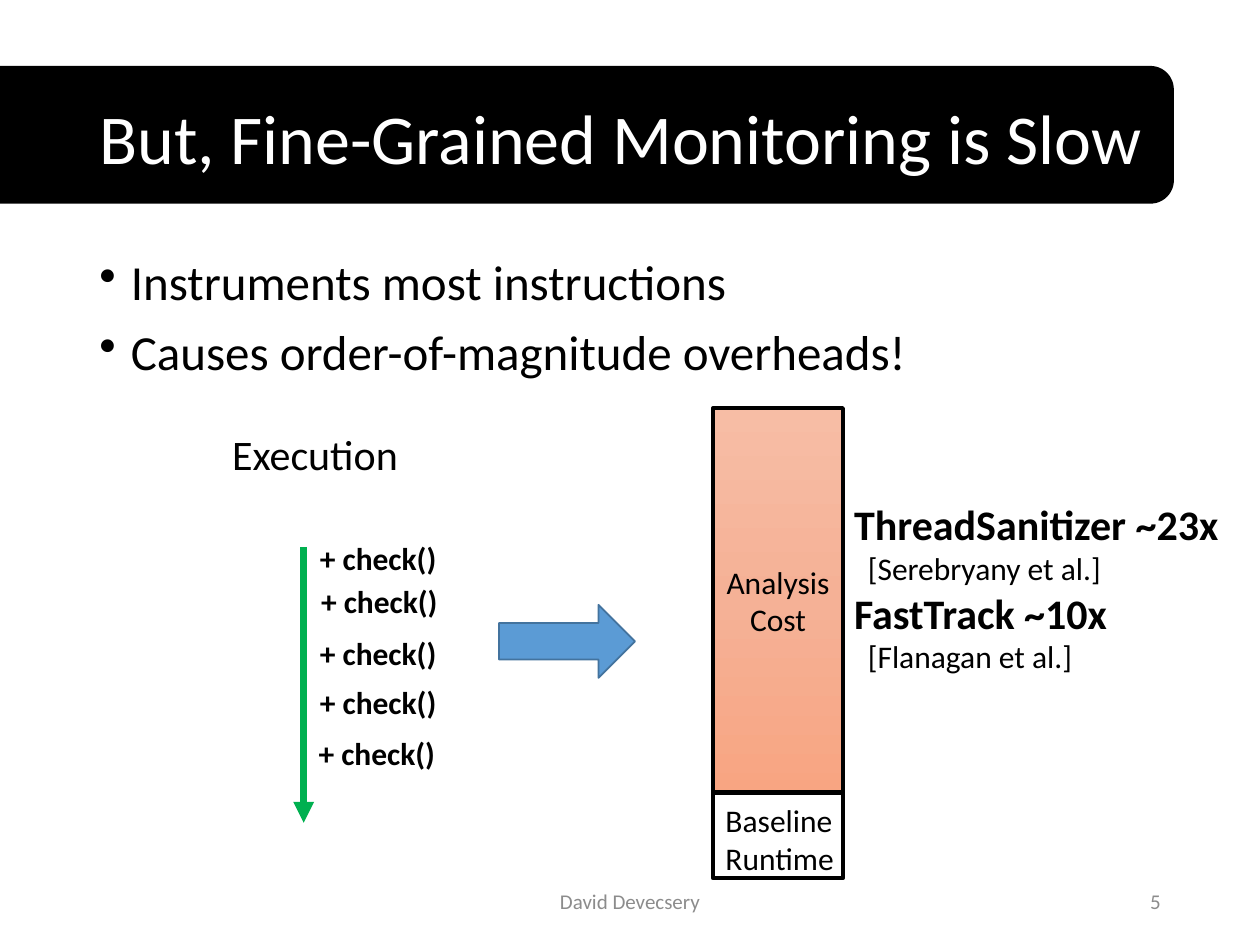
from copy import deepcopy

from pptx import Presentation
from pptx.dml.color import RGBColor
from pptx.enum.shapes import MSO_CONNECTOR as Connector, MSO_SHAPE as Preset
from pptx.enum.text import MSO_ANCHOR as Anchor, PP_ALIGN as Align
from pptx.oxml.ns import qn
from pptx.util import Pt
from lxml.etree import SubElement

BLACK = RGBColor(0x00, 0x00, 0x00)
WHITE = RGBColor(0xFF, 0xFF, 0xFF)
GRAY = RGBColor(0x8C, 0x8C, 0x8C)
GREEN = RGBColor(0x00, 0xB0, 0x50)
BLUE = RGBColor(0x5B, 0x9B, 0xD5)
DARK_BLUE = RGBColor(0x43, 0x73, 0x9E)
COST_GRADIENT = (
    RGBColor(0xF7, 0xBD, 0xA5),
    RGBColor(0xF5, 0xB1, 0x96),
    RGBColor(0xF8, 0xA5, 0x82),
)

EMU_PER_PX = 9144
FONT = "Calibri"


def px(length):
    return length * EMU_PER_PX


class SlideBuilder:
    def __init__(self, presentation):
        self.slide = presentation.slides.add_slide(presentation.slide_layouts[6])

    def label(self, shape, lines, size, color=BLACK, bold=False,
              align=Align.LEFT, anchor=Anchor.TOP, spacing=1.0):
        frame = shape.text_frame
        frame.word_wrap = True
        frame.vertical_anchor = anchor
        for index, line in enumerate(lines):
            paragraph = frame.paragraphs[0] if index == 0 else frame.add_paragraph()
            paragraph.text = line
            paragraph.alignment = align
            paragraph.line_spacing = spacing
            self.style(paragraph, size, color, bold)
        return frame.paragraphs

    def style(self, paragraph, size, color=BLACK, bold=False):
        font = paragraph.font
        font.name = FONT
        font.size = Pt(size)
        font.bold = bold
        font.color.rgb = color

    def text(self, left, top, width, height, lines, size, **style):
        box = self.slide.shapes.add_textbox(px(left), px(top), px(width), px(height))
        return self.label(box, lines, size, **style)

    def bullets(self, left, top, width, height, lines, size):
        paragraphs = self.text(left, top, width, height, lines, size, spacing=0.9)
        for index, paragraph in enumerate(paragraphs):
            properties = paragraph._p.get_or_add_pPr()
            properties.set("marL", str(px(25)))
            properties.set("indent", str(-px(25)))
            bullet = properties.makeelement(qn("a:buChar"), {"char": "•"})
            properties.find(qn("a:defRPr")).addprevious(bullet)
            if index:
                paragraph.space_before = Pt(10)

    def citations(self, left, top, width, height, entries):
        lines = [line for entry in entries for line in entry]
        paragraphs = self.text(left, top, width, height, lines, 24, bold=True)
        for paragraph in paragraphs[1::2]:
            self.style(paragraph, 18)
            paragraph._p.get_or_add_pPr().set("marL", str(px(11)))

    def shape(self, preset, left, top, width, height, fill, line, weight):
        shape = self.slide.shapes.add_shape(
            preset, px(left), px(top), px(width), px(height))
        shape.shadow.inherit = False
        if isinstance(fill, RGBColor):
            shape.fill.solid()
            shape.fill.fore_color.rgb = fill
        else:
            self.gradient(shape, fill)
        shape.line.color.rgb = line
        shape.line.width = Pt(weight)
        return shape

    def gradient(self, shape, colors):
        shape.fill.gradient()
        shape.fill.gradient_angle = 270
        first = shape._element.spPr.find(".//" + qn("a:gs"))
        first.addnext(deepcopy(first))
        stops = shape.fill.gradient_stops
        for index, (stop, color) in enumerate(zip(stops, colors)):
            stop.color.rgb = color
            stop.position = index / (len(colors) - 1)

    def arrow(self, x, top, bottom, color, weight):
        connector = self.slide.shapes.add_connector(
            Connector.STRAIGHT, px(x), px(top), px(x), px(bottom))
        connector.line.color.rgb = color
        connector.line.width = Pt(weight)
        SubElement(connector.line._get_or_add_ln(), qn("a:tailEnd"), type="triangle")
        SubElement(connector._element.spPr, qn("a:effectLst"))


def main():
    presentation = Presentation()
    presentation.slide_width = px(1000)
    presentation.slide_height = px(750)
    builder = SlideBuilder(presentation)

    builder.shape(Preset.ROUNDED_RECTANGLE, -64, 53, 995, 108, BLACK, BLACK, 1)
    builder.text(69, 40, 862, 145, ["But, Fine-Grained Monitoring is Slow"], 40,
                 color=WHITE, anchor=Anchor.MIDDLE, spacing=0.9)
    builder.bullets(69, 200, 862, 136, [
        "Instruments most instructions",
        "Causes order-of-magnitude overheads!",
    ], 28)

    builder.text(164, 335, 172, 50, ["Execution"], 24, align=Align.CENTER)
    builder.arrow(241, 434, 653, GREEN, 4)
    for left, top in ((244, 423), (245, 457), (244, 498), (244, 537), (243, 578)):
        builder.text(left, top, 150, 40, ["+ check()"], 18, bold=True)
    builder.shape(Preset.RIGHT_ARROW, 396, 480, 108, 58, BLUE, DARK_BLUE, 1)

    cost = builder.shape(Preset.RECTANGLE, 566, 324, 103, 305,
                         COST_GRADIENT, BLACK, 2.5)
    builder.label(cost, ["Analysis", "Cost"], 18,
                  align=Align.CENTER, anchor=Anchor.MIDDLE)
    builder.shape(Preset.RECTANGLE, 566, 629, 103, 68, WHITE, BLACK, 2.5)
    builder.text(566, 631, 114, 71, ["Baseline Runtime"], 18)
    builder.citations(668, 391, 331, 155, [
        ("ThreadSanitizer ~23x", "[Serebryany et al.]"),
        ("FastTrack ~10x", "[Flanagan et al.]"),
    ])

    builder.text(331, 695, 338, 40, ["David Devecsery"], 12, color=GRAY,
                 align=Align.CENTER, anchor=Anchor.MIDDLE)
    builder.text(706, 695, 225, 40, ["5"], 12, color=GRAY,
                 align=Align.RIGHT, anchor=Anchor.MIDDLE)
    presentation.save("out.pptx")


if __name__ == "__main__":
    main()
